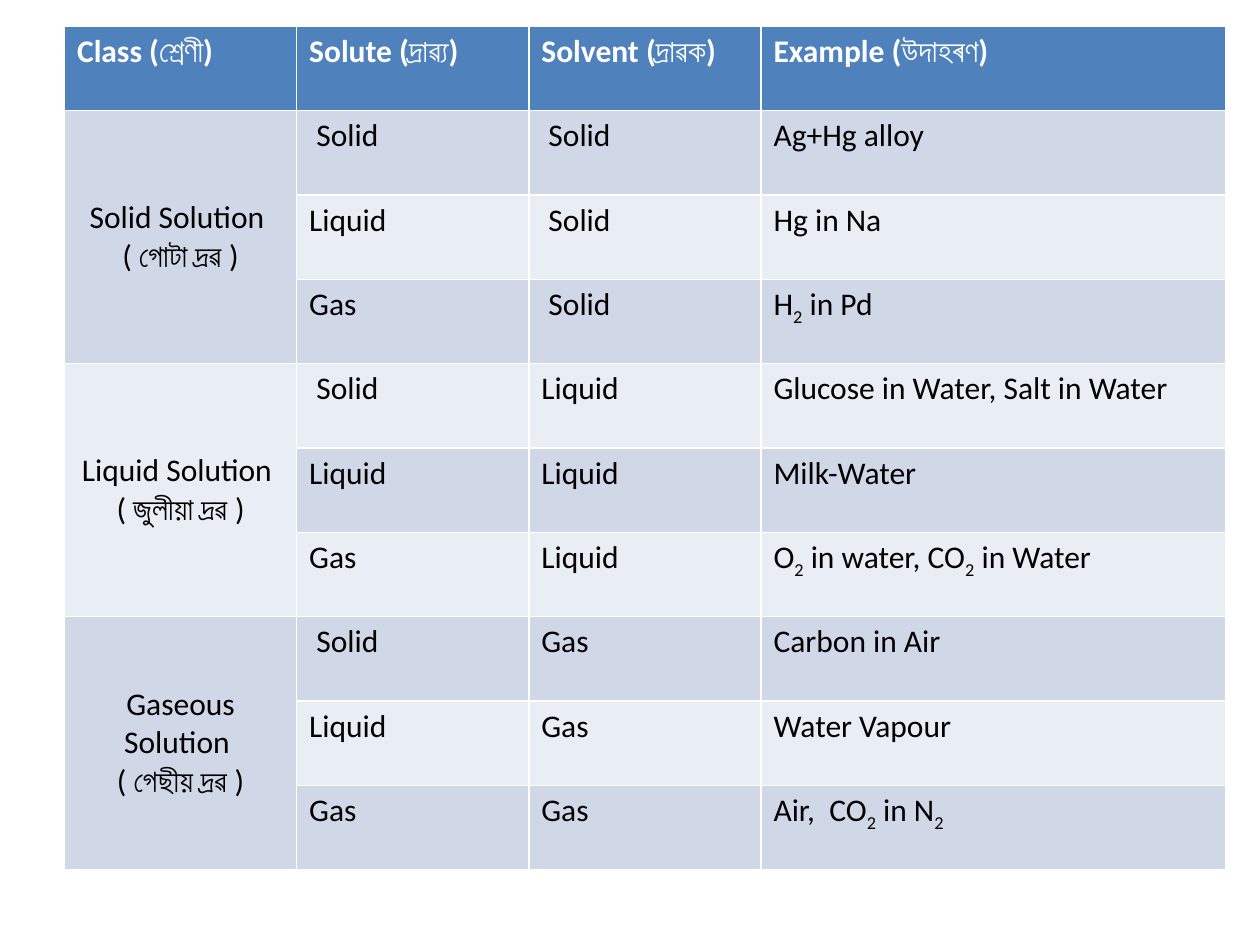
"""Build a slide that sorts solutions by class, solute and solvent."""
import dataclasses

import pptx
import pptx.dml.color
import pptx.enum.text
import pptx.util

Cm = pptx.util.Cm
RGB = pptx.dml.color.RGBColor
ALIGN = pptx.enum.text.PP_ALIGN
ANCHOR = pptx.enum.text.MSO_ANCHOR

WHITE = RGB(0xFF, 0xFF, 0xFF)
BLACK = RGB(0x00, 0x00, 0x00)
BLUE = RGB(0x4F, 0x81, 0xBD)
BANDS = (RGB(0xD0, 0xD8, 0xE8), RGB(0xE9, 0xED, 0xF4))

WIDTHS = (4.68, 4.68, 4.68, 9.37)
HEIGHT = 1.7
HEADS = ("Class (শ্রেণী)", "Solute (দ্রাৱ্য)", "Solvent (দ্রাৱক)", "Example (উদাহৰণ)")
SOLUTES = (" Solid", "Liquid", "Gas")


@dataclasses.dataclass
class Group:
    label: str
    solvent: str
    samples: tuple[str, ...]


GROUPS = (
    Group("Solid Solution \n( গোটা দ্রৱ )", " Solid",
          ("Ag+Hg alloy", "Hg in Na", "H_2 in Pd")),
    Group("Liquid Solution \n( জুলীয়া দ্রৱ )", "Liquid",
          ("Glucose in Water, Salt in Water", "Milk-Water",
           "O_2 in water, CO_2 in Water")),
    Group("Gaseous Solution \n( গেছীয় দ্রৱ )", "Gas",
          ("Carbon in Air", "Water Vapour", "Air,  CO_2 in N_2")),
)


def add_run(para, text: str, lower: bool = False) -> None:
    """Add a run, lowered when it is a subscript."""
    if text:
        run = para.add_run()
        run.text = text
        if lower:
            run._r.get_or_add_rPr().set("baseline", "-25000")


def write(cell, text: str, ink: RGB = BLACK, bold: bool = False) -> None:
    """Write lines in a cell, lowering each digit after an underscore."""
    lines = text.split("\n")
    frame = cell.text_frame
    for num, line in enumerate(lines):
        para = frame.add_paragraph() if num else frame.paragraphs[0]
        font = para.font
        font.name = "Calibri"
        font.size = pptx.util.Pt(18)
        font.bold = bold
        font.color.rgb = ink
        first, *parts = line.split("_")
        add_run(para, first)
        for part in parts:
            add_run(para, part[0], True)
            add_run(para, part[1:])


def paint(cell, fill: RGB) -> None:
    """Fill a cell with one colour."""
    cell.fill.solid()
    cell.fill.fore_color.rgb = fill


def add_group(table, top: int, group: Group) -> None:
    """Fill the rows of one class and merge its label cell."""
    for row, (solute, sample) in enumerate(zip(SOLUTES, group.samples), top):
        for col, text in enumerate((solute, group.solvent, sample), 1):
            write(table.cell(row, col), text)
        for cell in table.rows[row].cells:
            paint(cell, BANDS[(row - 1) % 2])
    label = table.cell(top, 0)
    label.merge(table.cell(top + len(SOLUTES) - 1, 0))
    label.vertical_anchor = ANCHOR.MIDDLE
    write(label, group.label)
    for para in label.text_frame.paragraphs:
        para.alignment = ALIGN.CENTER


def main() -> None:
    """Make the deck and save it."""
    deck = pptx.Presentation()
    deck.slide_width, deck.slide_height = Cm(25.4), Cm(19.05)
    slide = deck.slides.add_slide(deck.slide_layouts[6])
    count = 1 + len(GROUPS) * len(SOLUTES)
    table = slide.shapes.add_table(
        count, len(WIDTHS), Cm(1.3), Cm(0.53),
        Cm(sum(WIDTHS)), Cm(HEIGHT * count)).table
    for col, width in zip(table.columns, WIDTHS):
        col.width = Cm(width)
    for row in table.rows:
        row.height = Cm(HEIGHT)
    for cell, head in zip(table.rows[0].cells, HEADS):
        paint(cell, BLUE)
        write(cell, head, WHITE, True)
    for num, group in enumerate(GROUPS):
        add_group(table, 1 + num * len(SOLUTES), group)
    deck.save("out.pptx")


if __name__ == "__main__":
    main()
